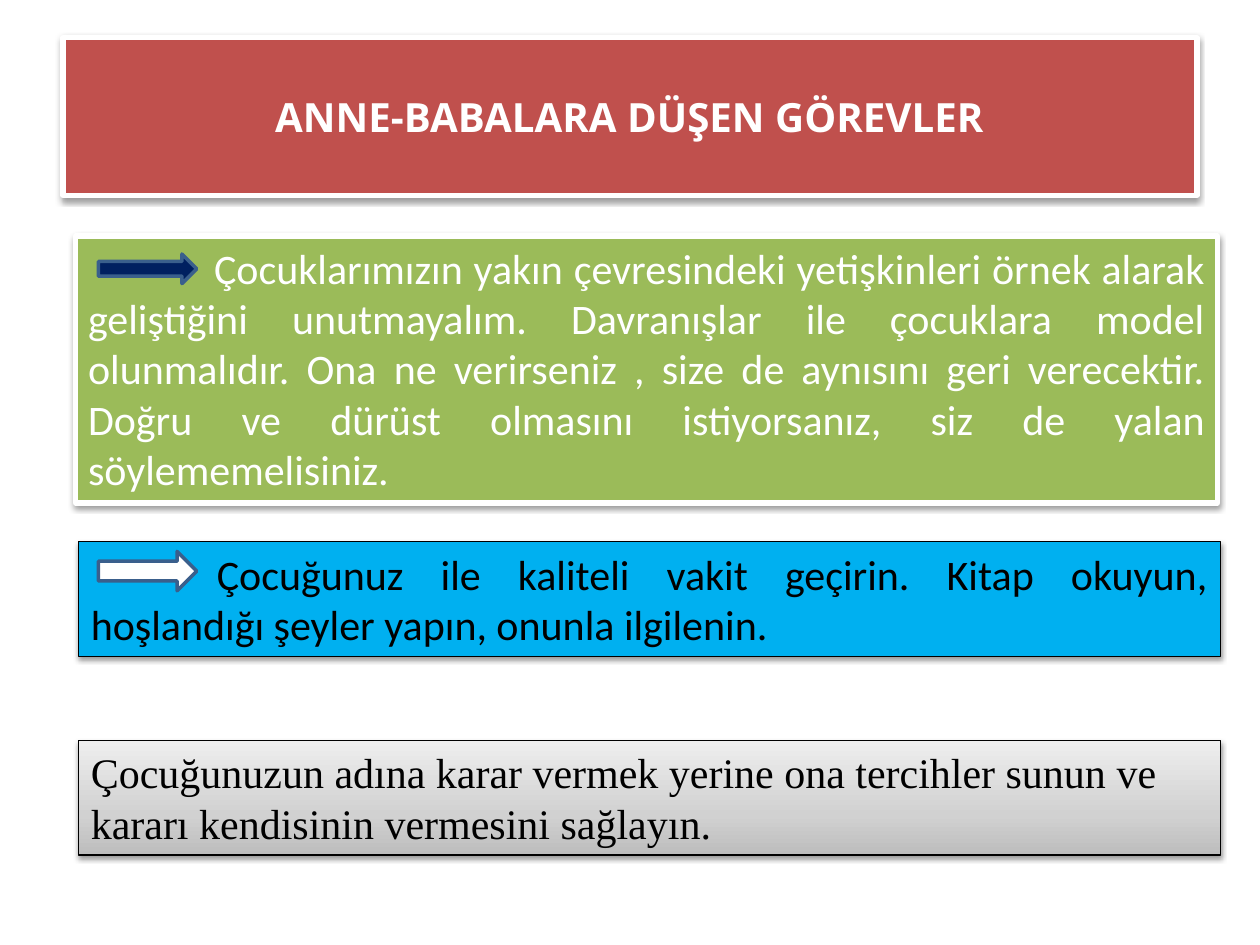
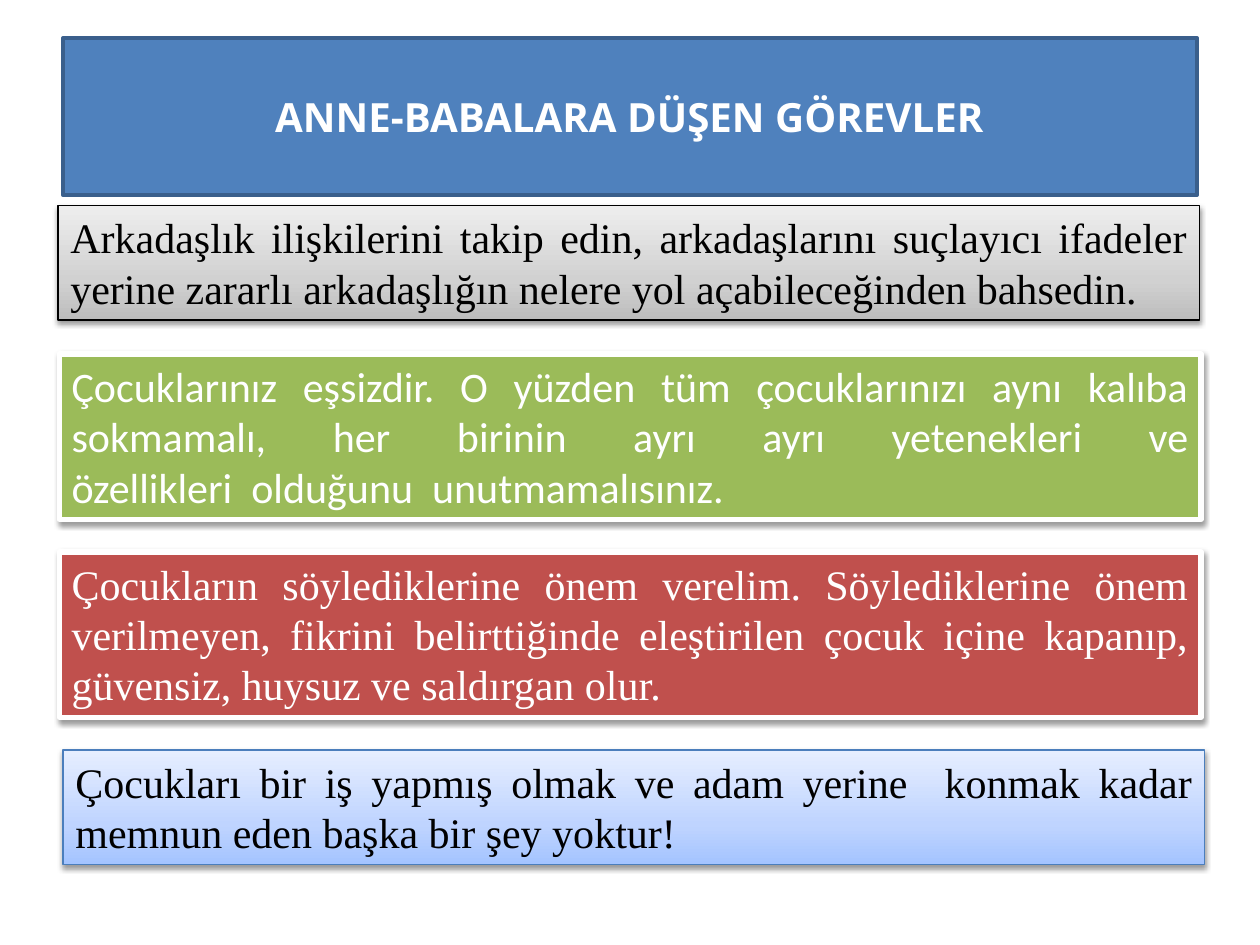
from copy import deepcopy

from lxml import etree
from pptx import Presentation
from pptx.dml.color import RGBColor
from pptx.enum.shapes import MSO_SHAPE
from pptx.enum.text import MSO_ANCHOR, MSO_AUTO_SIZE, PP_ALIGN
from pptx.oxml.ns import qn
from pptx.util import Pt

RECT, ARROW = MSO_SHAPE.RECTANGLE, MSO_SHAPE.RIGHT_ARROW
TOP, MIDDLE = MSO_ANCHOR.TOP, MSO_ANCHOR.MIDDLE
LEFT, CENTER, JUSTIFY = PP_ALIGN.LEFT, PP_ALIGN.CENTER, PP_ALIGN.JUSTIFY
GROW = MSO_AUTO_SIZE.SHAPE_TO_FIT_TEXT

SANS, SERIF, HEAD = "Calibri", "Times New Roman", "Open Sans"
WHITE, BLACK, EDGE = "FFFFFF", "000000", "3A5F8C"

# Style: fill (one colour or three gradient stops), line, line width, text colour
RED = ("C0504D", WHITE, 3, WHITE)
GREEN = ("9BBB59", WHITE, 3, WHITE)
CYAN = ("00B0F0", BLACK, 0.75, BLACK)
GRAY = (("BDBDBD", "D1D1D1", "EEEEEE"), BLACK, 0.75, BLACK)
PALE = (("A4C4FF", "BFD4FF", "E6EEFF"), "4B7EBC", 0.75, BLACK)
BLUE = ("4F81BD", EDGE, 2, WHITE)
NAVY = ("002060", EDGE, 2, WHITE)
PLAIN = (WHITE, EDGE, 2, BLACK)
STOPS = (0, 0.35, 1)

TITLE = "ANNE-BABALARA DÜŞEN GÖREVLER"
WIDE, LINE, PAD = 652.5, 29.1, 7.2
INDENT = 72  # first line, clear of the arrow
FIXED = chr(160) * 2  # no-break spaces that keep three words on one line

# Slide: title style, boxes (left, top, lines, style, font, align, indent, text),
# arrows (top, height, style)
SLIDES = [
    (RED, [
        (43.2, 134.8, 5, GREEN, SANS, JUSTIFY, INDENT,
         "Çocuklarımızın yakın çevresindeki yetişkinleri örnek alarak "
         "geliştiğini unutmayalım. Davranışlar ile çocuklara model olunmalıdır. "
         "Ona ne verirseniz , size de aynısını geri verecektir. Doğru ve dürüst "
         "olmasını istiyorsanız, siz de yalan söylememelisiniz."),
        (44.8, 309.6, 2, CYAN, SANS, JUSTIFY, INDENT,
         "Çocuğunuz ile kaliteli vakit geçirin. Kitap okuyun, "
         "hoşlandığı şeyler yapın, onunla ilgilenin."),
        (44.8, 423.2, 2, GRAY, SERIF, LEFT, 0,
         "Çocuğunuzun adına karar vermek yerine ona tercihler sunun ve "
         "kararı kendisinin vermesini sağlayın."),
    ], [(145.2, 16.9, NAVY), (315.1, 22.5, PLAIN)]),
    (BLUE, [
        (33.1, 117.4, 2, GRAY, SERIF, JUSTIFY, 0,
         "Arkadaşlık ilişkilerini takip edin, arkadaşlarını suçlayıcı ifadeler "
         "yerine zararlı arkadaşlığın nelere yol açabileceğinden bahsedin."),
        (33.8, 202.3, 3, GREEN, SANS, JUSTIFY, 0,
         "Çocuklarınız eşsizdir. O yüzden tüm çocuklarınızı aynı kalıba "
         "sokmamalı, her birinin ayrı ayrı yetenekleri ve "
         f"özellikleri{FIXED}olduğunu{FIXED}unutmamalısınız."),
        (33.8, 315.4, 3, RED, SERIF, JUSTIFY, 0,
         "Çocukların söylediklerine önem verelim. Söylediklerine önem "
         "verilmeyen, fikrini belirttiğinde eleştirilen çocuk içine kapanıp, "
         "güvensiz, huysuz ve saldırgan olur."),
        (36, 428.6, 2, PALE, SERIF, JUSTIFY, 0,
         "Çocukları bir iş yapmış olmak ve adam yerine  konmak kadar "
         "memnun eden başka bir şey yoktur!"),
    ], []),
]


def rgb(code):
    return RGBColor.from_string(code)


def draw(slide, kind, place, style, shade, text="", font=SANS, size=24,
         align=LEFT, anchor=TOP, indent=0):
    """Add a styled shape, with a soft shadow if shade, and its text."""
    fill, line, weight, ink = style
    shape = slide.shapes.add_shape(kind, *[Pt(n) for n in place])
    if isinstance(fill, str):
        shape.fill.solid()
        shape.fill.fore_color.rgb = rgb(fill)
    else:
        shape.fill.gradient()
        shape.fill.gradient_angle = 90
        stops = shape.element.spPr.find(qn("a:gradFill")).find(qn("a:gsLst"))
        stops.append(deepcopy(stops[-1]))
        for stop, spot, code in zip(shape.fill.gradient_stops, STOPS, fill):
            stop.position = spot
            stop.color.rgb = rgb(code)
    shape.line.color.rgb = rgb(line)
    shape.line.width = Pt(weight)

    shape.shadow.inherit = False
    if shade:
        effects = shape.element.spPr.find(qn("a:effectLst"))
        outer = etree.SubElement(effects, qn("a:outerShdw"), blurRad=str(Pt(3.1)),
                                 dist=str(Pt(1.6)), dir="5400000", rotWithShape="0")
        tint = etree.SubElement(outer, qn("a:srgbClr"), val=BLACK)
        etree.SubElement(tint, qn("a:alpha"), val="38000")

    if text:
        frame = shape.text_frame
        frame.word_wrap = True
        frame.vertical_anchor = anchor
        if anchor == TOP:
            frame.auto_size = GROW
        para = frame.paragraphs[0]
        para.alignment = align
        if indent:
            props = para._p.get_or_add_pPr()
            props.set("marL", "0")
            props.set("indent", str(Pt(indent)))
        run = para.add_run()
        run.text = text
        run.font.name = font
        run.font.size = Pt(size)
        run.font.bold = font == HEAD
        run.font.color.rgb = rgb(ink)


deck = Presentation()
deck.slide_width, deck.slide_height = Pt(720), Pt(540)

for head, boxes, arrows in SLIDES:
    slide = deck.slides.add_slide(deck.slide_layouts[6])
    draw(slide, RECT, (36, 21.6, 648, 90), head, head == RED,
         TITLE, HEAD, 23, CENTER, MIDDLE)
    for left, top, lines, style, font, align, indent, text in boxes:
        draw(slide, RECT, (left, top, WIDE, PAD + lines * LINE), style, True,
             text, font, align=align, indent=indent)
    for top, high, style in arrows:
        draw(slide, ARROW, (56.2, top, 56.2, high), style, False)

deck.save("out.pptx")
